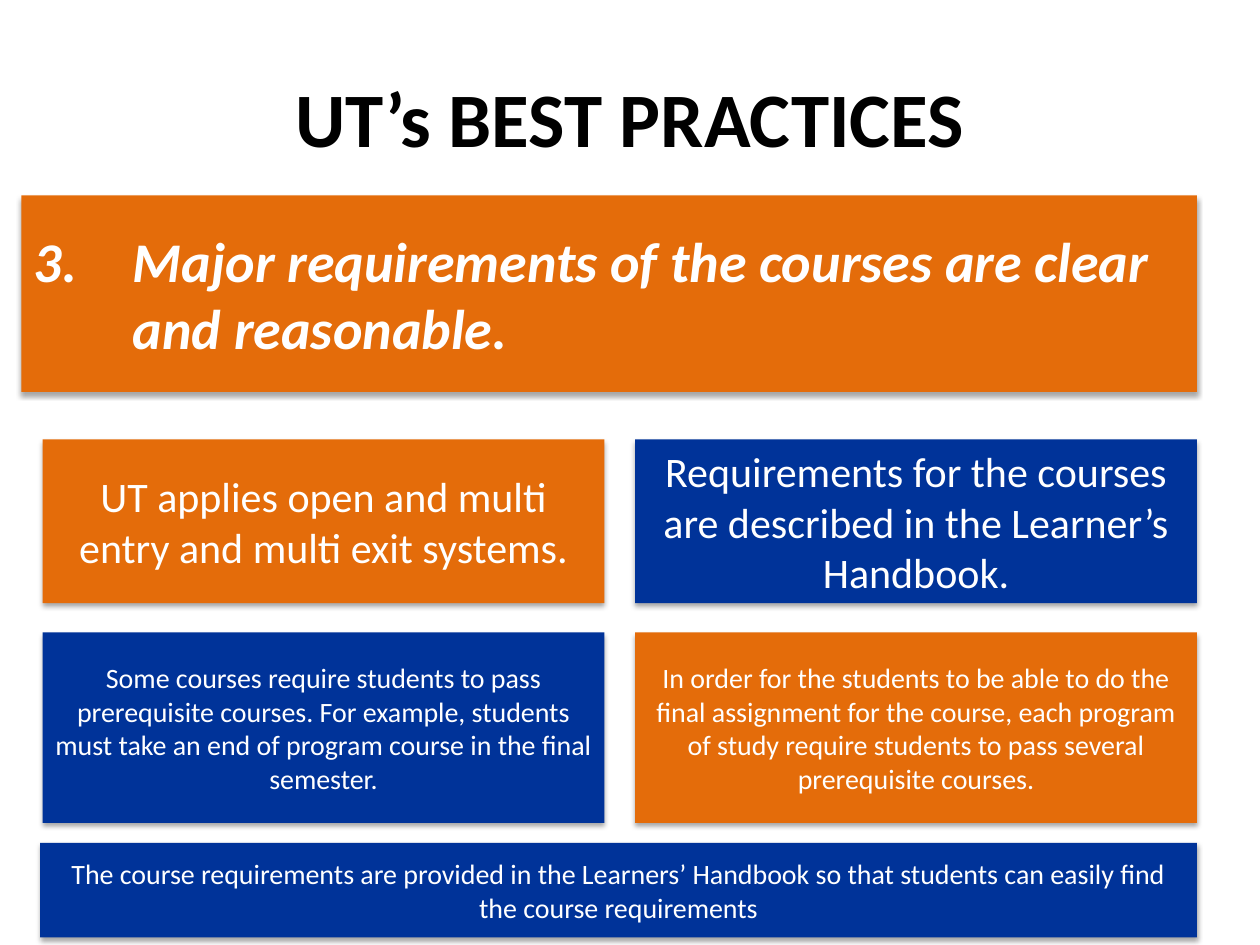
from lxml.etree import SubElement
from pptx import Presentation
from pptx.dml.color import RGBColor
from pptx.enum.shapes import MSO_SHAPE as Shape
from pptx.enum.text import MSO_ANCHOR as Anchor, PP_ALIGN as Align
from pptx.oxml.ns import qn
from pptx.util import Cm, Pt

ORANGE = RGBColor(0xE4, 0x6C, 0x0A)
BLUE = RGBColor(0x00, 0x33, 0x99)
WHITE = RGBColor(0xFF, 0xFF, 0xFF)
BLACK = RGBColor(0x00, 0x00, 0x00)

RIGHT_EDGE = 24.13
CARD_ROWS = [
    (8.86, 3.3, 24, [
        ("UT applies open and multi entry and multi exit systems.", ORANGE),
        ("Requirements for the courses are described in the Learner’s Handbook.", BLUE),
    ]),
    (12.75, 3.84, 16, [
        ("Some courses require students to pass prerequisite courses. For example, "
         "students must take an end of program course in the final semester.", BLUE),
        ("In order for the students to be able to do the final assignment for the course, "
         "each program of study require students to pass several prerequisite courses.", ORANGE),
    ]),
]


def write_text(frame, text, size, color=WHITE, align=Align.CENTER, bold=False, italic=False, hanging=0):
    """Write one formatted paragraph, with an optional hanging indent in cm."""
    frame.word_wrap = True
    frame.vertical_anchor = Anchor.MIDDLE
    paragraph = frame.paragraphs[0]
    paragraph.alignment = align
    if hanging:
        properties = paragraph._p.get_or_add_pPr()
        properties.set("marL", str(Cm(hanging)))
        properties.set("indent", str(-Cm(hanging)))
    run = paragraph.add_run()
    run.text = text
    font = run.font
    font.name, font.size, font.bold, font.italic = "Calibri", Pt(size), bold, italic
    font.color.rgb = color


def add_shadow(panel):
    """Give a panel a soft shadow straight below it."""
    panel.shadow.inherit = False
    effects = panel._element.spPr.find(qn("a:effectLst"))
    shadow = SubElement(effects, qn("a:outerShdw"), blurRad=str(Pt(3.1)), dist=str(Pt(1.8)),
                        dir="5400000", rotWithShape="0")
    black = SubElement(shadow, qn("a:srgbClr"), val="000000")
    SubElement(black, qn("a:alpha"), val="35000")


def add_panel(slide, box, fill, text, size, **text_format):
    """Add a filled, shadowed rectangle with text in a box given in cm."""
    panel = slide.shapes.add_shape(Shape.RECTANGLE, *map(Cm, box))
    panel.fill.solid()
    panel.fill.fore_color.rgb = fill
    panel.line.fill.background()
    add_shadow(panel)
    write_text(panel.text_frame, text, size, **text_format)


def place_title(slide, box):
    """Move and fill the title placeholder."""
    title = slide.shapes.title
    title.left, title.top, title.width, title.height = map(Cm, box)
    write_text(title.text_frame, "UT’s BEST PRACTICES", 44, color=BLACK, bold=True)


def place_cards(slide, left, right, gap):
    """Place the two rows of paired cards between two edges."""
    width = (right - left - gap) / 2
    for top, height, size, cards in CARD_ROWS:
        for column, (text, fill) in enumerate(cards):
            card_left = left + column * (width + gap)
            add_panel(slide, (card_left, top, width, height), fill, text, size)


def main():
    """Build and save the slide."""
    deck = Presentation()
    deck.slide_width, deck.slide_height = Cm(25.4), Cm(19.05)
    slide = deck.slides.add_slide(deck.slide_layouts[5])
    place_title(slide, (1.27, 0.76, 22.86, 3.18))
    add_panel(slide, (0.43, 3.94, RIGHT_EDGE - 0.43, 3.96), ORANGE,
              "3.\tMajor requirements of the courses are clear and reasonable.", 32,
              align=Align.LEFT, bold=True, italic=True, hanging=2)
    place_cards(slide, 0.86, RIGHT_EDGE, 0.62)
    add_panel(slide, (0.81, 16.99, RIGHT_EDGE - 0.81, 1.91), BLUE,
              "The course requirements are provided in the Learners’ Handbook so that "
              "students can easily find the course requirements", 16)
    deck.save("out.pptx")


if __name__ == "__main__":
    main()
